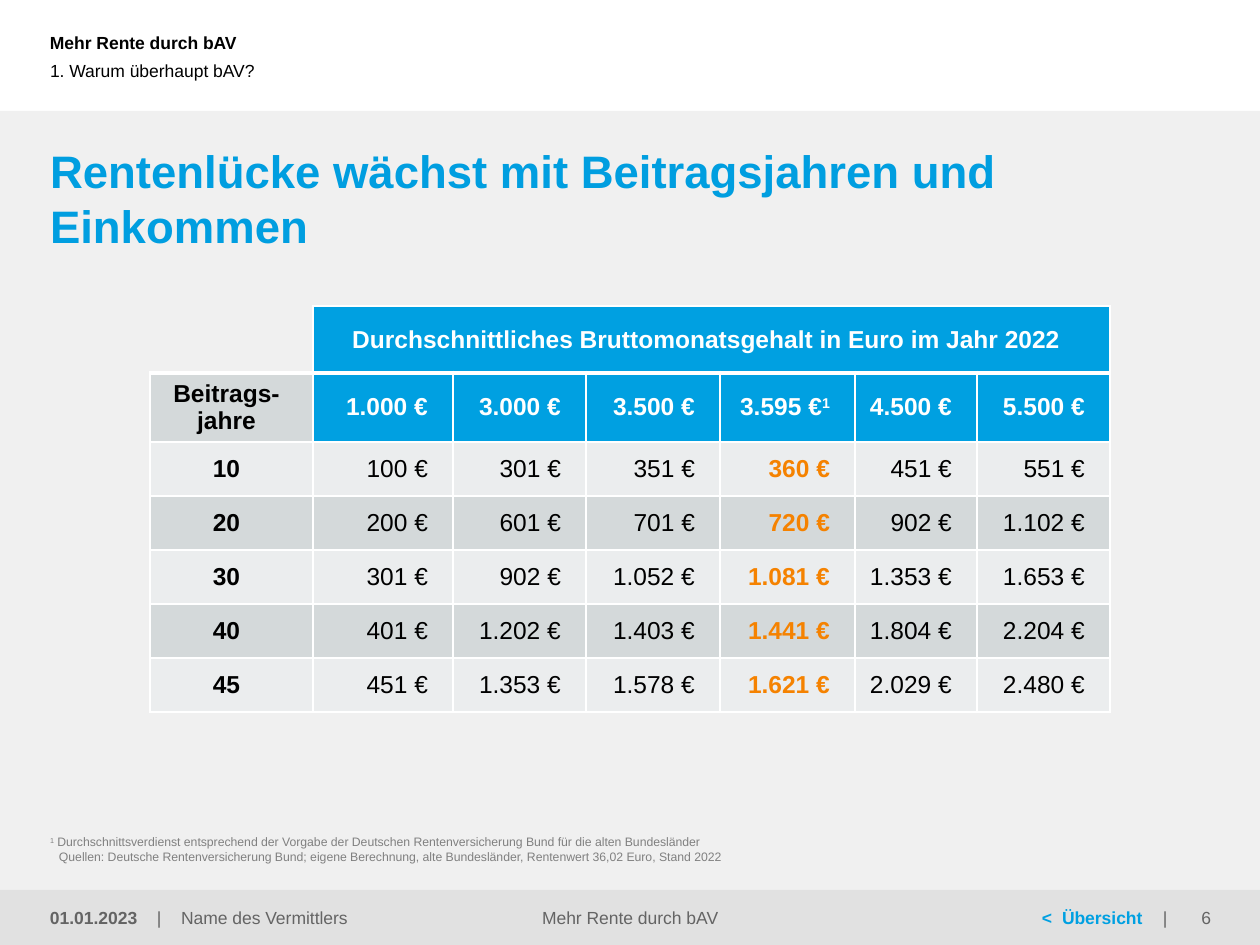
from copy import deepcopy
from dataclasses import dataclass

from lxml import etree
from pptx import Presentation
from pptx.dml.color import RGBColor
from pptx.enum.shapes import MSO_SHAPE
from pptx.enum.text import MSO_ANCHOR, MSO_AUTO_SIZE, PP_ALIGN
from pptx.oxml.ns import qn
from pptx.util import Emu, Pt

EMU_PER_PX = 914400 / 126
FONT = "Arial"
WHITE = RGBColor(0xFF, 0xFF, 0xFF)
BLACK = RGBColor(0, 0, 0)
PANEL = RGBColor(0xF0, 0xF0, 0xF0)
FOOTER_BAND = RGBColor(0xE1, 0xE1, 0xE1)
FOOTER_TEXT = RGBColor(0x64, 0x64, 0x64)
NOTE_GREY = RGBColor(0x80, 0x80, 0x80)
TITLE_BLUE = RGBColor(0x00, 0x9E, 0xE0)
BLUE = RGBColor(0x00, 0xA0, 0xE1)
ORANGE = RGBColor(0xF5, 0x82, 0x00)
ROW_LIGHT = RGBColor(0xEB, 0xED, 0xEE)
ROW_DARK = RGBColor(0xD4, 0xD9, 0xDA)
LEFT, CENTER, RIGHT = PP_ALIGN.LEFT, PP_ALIGN.CENTER, PP_ALIGN.RIGHT
TOP, MIDDLE, BOTTOM = MSO_ANCHOR.TOP, MSO_ANCHOR.MIDDLE, MSO_ANCHOR.BOTTOM
RECTANGLE = MSO_SHAPE.RECTANGLE
NO_AUTOFIT = MSO_AUTO_SIZE.NONE


@dataclass(frozen=True)
class Span:
    text: str
    color: RGBColor
    bold: bool = False
    superscript: bool = False


@dataclass(frozen=True)
class TextBlock:
    box: tuple[int, int, int, int]
    spans: tuple[Span, ...]
    size: int = 10
    insets: tuple[int, int, int, int] = (0, 0, 0, 0)
    align: PP_ALIGN = LEFT
    anchor: MSO_ANCHOR = MIDDLE
    hanging: int = 0


@dataclass(frozen=True)
class FooterItem:
    left: int
    width: int
    span: Span
    align: PP_ALIGN = LEFT


MARGIN = 50
FOOTER_TOP, FOOTER_HEIGHT = 890, 55
HEADER = TextBlock((0, 0, 879, 84), (Span("Mehr Rente durch bAV", BLACK, True),),
                   insets=(MARGIN, 6, 13, 6))
TITLE = TextBlock((MARGIN, 143, 1162, 69),
                  (Span("Rentenlücke wächst mit Beitragsjahren und Einkommen",
                        TITLE_BLUE, True),), size=26, anchor=TOP)
CHAPTER = TextBlock((0, 31, 901, 80), (Span("1. Warum überhaupt bAV?", BLACK),),
                    insets=(MARGIN, 0, 0, 0))
FOOTNOTE = TextBlock((MARGIN, 849, 1160, 15), (
    Span("1", NOTE_GREY, superscript=True),
    Span(" Durchschnittsverdienst entsprechend der Vorgabe der Deutschen "
         "Rentenversicherung Bund für die alten Bundesländer\n"
         "Quellen: Deutsche Rentenversicherung Bund; eigene Berechnung, "
         "alte Bundesländer, Rentenwert 36,02 Euro, Stand 2022", NOTE_GREY),
), size=7, anchor=BOTTOM, hanging=9)
DIVIDER = Span("|", FOOTER_TEXT)
FOOTER = (
    FooterItem(MARGIN, 100, Span("01.01.2023", FOOTER_TEXT, True)),
    FooterItem(157, 12, DIVIDER),
    FooterItem(181, 281, Span("Name des Vermittlers", FOOTER_TEXT)),
    FooterItem(470, 320, Span("Mehr Rente durch bAV", FOOTER_TEXT), CENTER),
    FooterItem(1042, 18, Span("<", BLUE, True)),
    FooterItem(1062, 94, Span("Übersicht", BLUE, True)),
    FooterItem(1163, 12, DIVIDER),
    FooterItem(1180, 31, Span("6", FOOTER_TEXT), RIGHT),
)

# Pension gap table
TABLE_LEFT, TABLE_TOP = 150, 306
COLUMN_WIDTHS = (163, 140, 133, 134, 135, 122, 133)
ROW_HEIGHTS = (67, 69) + (54,) * 5
AVERAGE_COLUMN = 4
TABLE_HEADING = "Durchschnittliches Bruttomonatsgehalt in Euro im Jahr 2022"
SALARIES = ("1.000", "3.000", "3.500", "3.595", "4.500", "5.500")
GAPS = {
    "10": ("100", "301", "351", "360", "451", "551"),
    "20": ("200", "601", "701", "720", "902", "1.102"),
    "30": ("301", "902", "1.052", "1.081", "1.353", "1.653"),
    "40": ("401", "1.202", "1.403", "1.441", "1.804", "2.204"),
    "45": ("451", "1.353", "1.578", "1.621", "2.029", "2.480"),
}


def px(length: int) -> Emu:
    return Emu(round(length * EMU_PER_PX))


def write_spans(paragraph, spans: tuple[Span, ...], size: int, align: PP_ALIGN) -> None:
    paragraph.alignment = align
    for span in spans:
        for index, line in enumerate(span.text.split("\n")):
            if index:
                paragraph.add_line_break()
            run = paragraph.add_run()
            run.text = line
            run.font.name, run.font.size = FONT, Pt(size)
            run.font.bold = span.bold
            run.font.color.rgb = span.color
            properties = run._r.get_or_add_rPr()
            if span.superscript:
                properties.set("baseline", "30000")
            if index:  # the break takes the height of its line
                run._r.getprevious().insert(0, deepcopy(properties))


def fill_block(shape, block: TextBlock) -> None:
    shape.left, shape.top, shape.width, shape.height = map(px, block.box)
    frame = shape.text_frame
    frame.word_wrap, frame.auto_size = True, NO_AUTOFIT
    frame.vertical_anchor = block.anchor
    (frame.margin_left, frame.margin_top,
     frame.margin_right, frame.margin_bottom) = map(px, block.insets)
    paragraph = frame.paragraphs[0]
    paragraph.space_before = Pt(0)
    properties = paragraph._p.get_or_add_pPr()
    properties.set("marL", str(px(block.hanging)))
    properties.set("indent", str(-px(block.hanging)))
    etree.SubElement(properties, qn("a:buNone"))
    write_spans(paragraph, block.spans, block.size, block.align)


def add_text(slide, block: TextBlock) -> None:
    fill_block(slide.shapes.add_textbox(*map(px, block.box)), block)


def add_footer_item(slide, item: FooterItem) -> None:
    box = (item.left, FOOTER_TOP, item.width, FOOTER_HEIGHT)
    add_text(slide, TextBlock(box, (item.span,), align=item.align))


def add_band(slide, top: int, height: int, color: RGBColor) -> None:
    band = slide.shapes.add_shape(RECTANGLE, 0, px(top), px(1260), px(height))
    band.shadow.inherit = False
    band.fill.solid()
    band.fill.fore_color.rgb = color
    band.line.fill.background()


def set_borders(cell, row: int, corner: bool) -> None:
    widths = {"L": 0 if corner else 1, "R": 1,
              "T": 0 if corner else 3 if row == 1 else 1,
              "B": 3 if row == 0 else 1}
    properties = cell._tc.get_or_add_tcPr()
    for position, (side, width) in enumerate(widths.items()):
        line = etree.Element(qn(f"a:ln{side}"), w=str(Pt(width)))
        if width:
            solid = etree.SubElement(line, qn("a:solidFill"))
            etree.SubElement(solid, qn("a:srgbClr"), val=str(WHITE))
        else:
            etree.SubElement(line, qn("a:noFill"))
        properties.insert(position, line)


def style_cell(cell, row: int, column: int) -> None:
    corner = row == column == 0
    if corner:
        cell.fill.background()
    else:
        cell.fill.solid()
        blue = row < 2 and column > 0
        cell.fill.fore_color.rgb = BLUE if blue else ROW_DARK if row % 2 else ROW_LIGHT
    set_borders(cell, row, corner)
    cell.vertical_anchor = MIDDLE
    centred = row == 0 or column == 0
    cell.margin_left, cell.margin_right = 0, px(10 if centred else 25)
    cell.margin_top = cell.margin_bottom = px(3)


def cell_spans(text: str, row: int, column: int) -> tuple[Span, ...]:
    if column == 0:
        return (Span(text, BLACK, True),)
    if row == 0:
        return (Span(text, WHITE, True),)
    average = column == AVERAGE_COLUMN
    if row > 1:
        return (Span(f"{text} €", ORANGE if average else BLACK, average),)
    salary = Span(f"{text} €", WHITE, True)
    return (salary, Span("1", WHITE, True, True)) if average else (salary,)


def add_gap_table(slide) -> None:
    rows = [("", TABLE_HEADING), ("Beitrags-jahre", *SALARIES)]
    rows += [(years, *gaps) for years, gaps in GAPS.items()]
    table = slide.shapes.add_table(
        len(rows), len(COLUMN_WIDTHS), px(TABLE_LEFT), px(TABLE_TOP),
        px(sum(COLUMN_WIDTHS)), px(sum(ROW_HEIGHTS))).table
    table.first_row = table.horz_banding = False
    for column, width in zip(table.columns, COLUMN_WIDTHS):
        column.width = px(width)
    for row, height in zip(table.rows, ROW_HEIGHTS):
        row.height = px(height)
    table.cell(0, 1).merge(table.cell(0, len(COLUMN_WIDTHS) - 1))
    for r, texts in enumerate(rows):
        for c in range(len(COLUMN_WIDTHS)):
            style_cell(table.cell(r, c), r, c)
        for c, text in enumerate(texts):
            if text:
                write_spans(table.cell(r, c).text_frame.paragraphs[0],
                            cell_spans(text, r, c), 14,
                            CENTER if r == 0 or c == 0 else RIGHT)


def main() -> None:
    presentation = Presentation()
    presentation.slide_width, presentation.slide_height = px(1260), px(945)
    slide = presentation.slides.add_slide(presentation.slide_layouts[3])
    title, chapter, footnote = slide.placeholders

    # Background bands, sent behind the placeholders
    add_band(slide, 111, 834, PANEL)
    add_band(slide, FOOTER_TOP, FOOTER_HEIGHT, FOOTER_BAND)
    for placeholder in (title, chapter, footnote):
        slide.shapes._spTree.append(placeholder._element)

    # Header, title and footnote
    add_text(slide, HEADER)
    fill_block(title, TITLE)
    fill_block(chapter, CHAPTER)
    fill_block(footnote, FOOTNOTE)

    # Table and footer
    add_gap_table(slide)
    for item in FOOTER:
        add_footer_item(slide, item)
    presentation.save("out.pptx")


if __name__ == "__main__":
    main()
